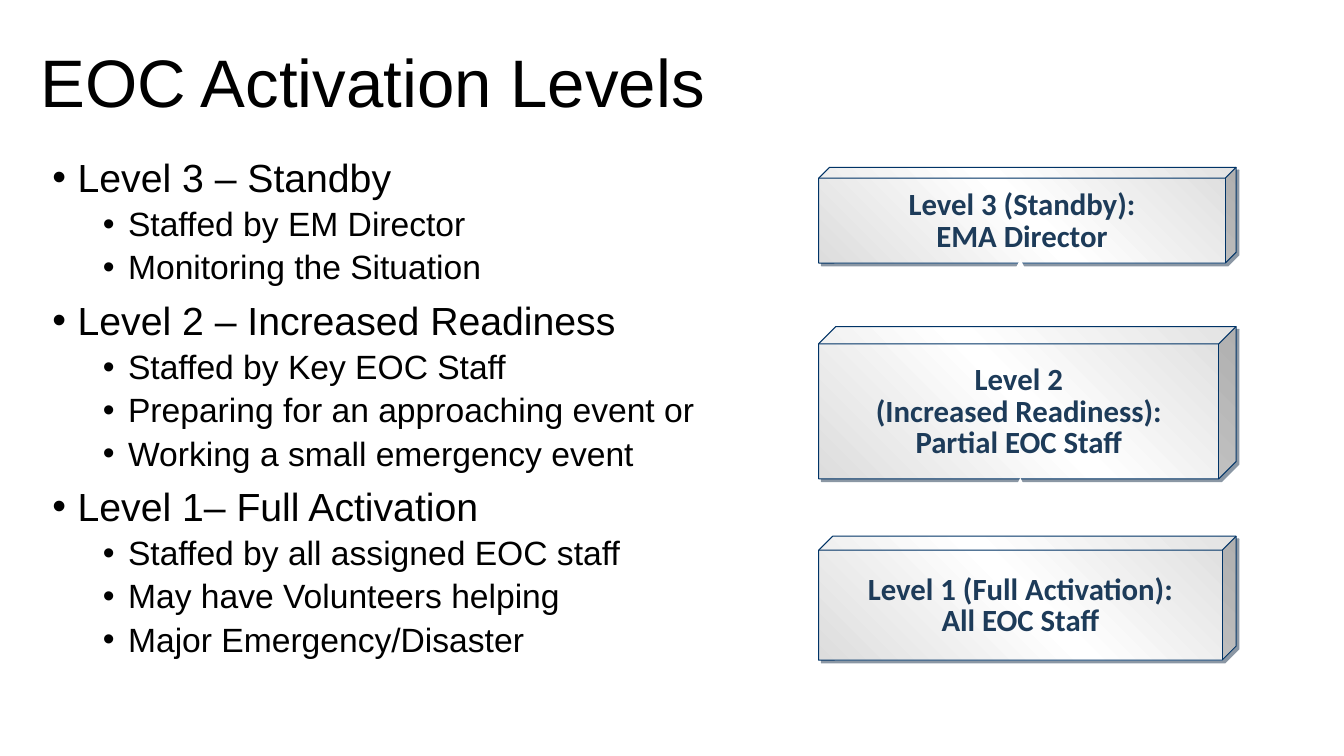
from dataclasses import dataclass

from lxml import etree
from pptx import Presentation
from pptx.dml.color import RGBColor
from pptx.enum.shapes import MSO_CONNECTOR, MSO_SHAPE
from pptx.enum.text import MSO_ANCHOR, MSO_AUTO_SIZE, PP_ALIGN
from pptx.oxml import parse_xml
from pptx.oxml.ns import nsdecls, qn
from pptx.util import Inches, Pt

CUBE = MSO_SHAPE.CUBE
STRAIGHT = MSO_CONNECTOR.STRAIGHT
LEFT, CENTER = PP_ALIGN.LEFT, PP_ALIGN.CENTER
TOP, MIDDLE = MSO_ANCHOR.TOP, MSO_ANCHOR.MIDDLE
NO_FIT = MSO_AUTO_SIZE.NONE


@dataclass(frozen=True)
class Theme:
    text: str = "000000"
    label: str = "1D3B59"
    edge: str = "003366"
    arrow: str = "FFFFFF"
    shade: str = "DDDDDD"
    shine: str = "FFFFFF"
    shadow: str = "18314A"
    body_font: str = "Arial"
    label_font: str = "Calibri"
    title_size: int = 48
    level_size: int = 28
    detail_size: int = 24
    label_size: int = 22


THEME = Theme()

LEVELS = [
    ("Level 3 – Standby", ["Staffed by EM Director", "Monitoring the Situation"]),
    ("Level 2 – Increased Readiness", [
        "Staffed by Key EOC Staff",
        "Preparing for an approaching event or",
        "Working a small emergency event",
    ]),
    ("Level 1– Full Activation", [
        "Staffed by all assigned EOC staff",
        "May have Volunteers helping",
        "Major Emergency/Disaster",
    ]),
]
BLOCKS = [
    (3.24, 1.51, ["Level 2", "(Increased Readiness):", "Partial EOC Staff"]),
    (1.66, 0.95, ["Level 3 (Standby):", "EMA Director"]),
    (5.32, 1.23, ["Level 1 (Full Activation):", "All EOC Staff"]),
]
ARROWS = [(3.23, 2.57), (5.41, 4.74)]


def add_text(paragraph, words, font_name, size, color, bold=False):
    run = paragraph.add_run()
    run.text = words
    run.font.name = font_name
    run.font.size = Pt(size)
    run.font.bold = bold
    run.font.color.rgb = RGBColor.from_string(color)


def place(placeholder, left, top, width, height, anchor):
    placeholder.left, placeholder.top = Inches(left), Inches(top)
    placeholder.width, placeholder.height = Inches(width), Inches(height)
    frame = placeholder.text_frame
    frame.word_wrap = True
    frame.auto_size = NO_FIT
    frame.vertical_anchor = anchor
    return frame


prs = Presentation()
prs.slide_width, prs.slide_height = Inches(13.33), Inches(7.5)
slide = prs.slides.add_slide(prs.slide_layouts[1])

heading = place(slide.shapes.title, 0.3, 0.32, 12.81, 1.06, MIDDLE).paragraphs[0]
heading.alignment = LEFT
heading.line_spacing = 0.9
add_text(heading, "EOC Activation Levels", THEME.body_font, THEME.title_size, THEME.text)

outline = place(slide.placeholders[1], 0.42, 1.52, 7.18, 5.65, TOP)
entries = []
for level, details in LEVELS:
    entries.append((0, level, THEME.level_size, 10, 0.25))
    entries += [(1, detail, THEME.detail_size, 5, 0.75) for detail in details]

for index, (depth, words, size, gap, indent) in enumerate(entries):
    entry = outline.add_paragraph() if index else outline.paragraphs[0]
    entry.level = depth
    entry.line_spacing = 0.9
    entry.space_before = Pt(gap if index else 0)
    entry.space_after = Pt(0)
    properties = entry._p.get_or_add_pPr()
    properties.set("marL", str(Inches(indent)))
    properties.set("indent", str(Inches(-0.25)))
    etree.SubElement(properties, qn("a:buFont")).set("typeface", "Arial")
    etree.SubElement(properties, qn("a:buChar")).set("char", "•")
    add_text(entry, words, THEME.body_font, size, THEME.text)

for position, (top, height, label_lines) in enumerate(BLOCKS):
    if position == 2:
        for start, end in ARROWS:
            arrow = slide.shapes.add_connector(
                STRAIGHT, Inches(10.12), Inches(start), Inches(10.12), Inches(end))
            arrow.line.color.rgb = RGBColor.from_string(THEME.arrow)
            arrow.line.width = Pt(6)
            etree.SubElement(arrow.line._get_or_add_ln(), qn("a:tailEnd")).set("type", "triangle")
            etree.SubElement(arrow._element.spPr, qn("a:effectLst"))

    block = slide.shapes.add_shape(CUBE, Inches(8.12), Inches(top), Inches(4.14), Inches(height))
    block.adjustments[0] = 0.113
    block.line.color.rgb = RGBColor.from_string(THEME.edge)
    block.line.width = Pt(0.75)
    block.shadow.inherit = False
    look = block._element.spPr
    look.find(qn("a:ln")).addprevious(parse_xml(
        f'<a:gradFill {nsdecls("a")} rotWithShape="1"><a:gsLst>'
        f'<a:gs pos="0"><a:srgbClr val="{THEME.shade}"/></a:gs>'
        f'<a:gs pos="50000"><a:srgbClr val="{THEME.shine}"/></a:gs>'
        f'<a:gs pos="100000"><a:srgbClr val="{THEME.shade}"/></a:gs>'
        '</a:gsLst><a:lin ang="18900000" scaled="1"/></a:gradFill>'))
    look.find(qn("a:effectLst")).append(parse_xml(
        f'<a:outerShdw {nsdecls("a")} dist="{Pt(2.8)}" dir="2700000" algn="ctr" rotWithShape="0">'
        f'<a:srgbClr val="{THEME.shadow}"><a:alpha val="50000"/></a:srgbClr></a:outerShdw>'))

    label = block.text_frame
    label.word_wrap = False
    label.vertical_anchor = MIDDLE
    label.margin_left = label.margin_right = Inches(0.1)
    label.margin_top, label.margin_bottom = Inches(0.05), Inches(0.02)
    for index, words in enumerate(label_lines):
        line = label.add_paragraph() if index else label.paragraphs[0]
        line.alignment = CENTER
        line.line_spacing = 0.85
        add_text(line, words, THEME.label_font, THEME.label_size, THEME.label, bold=True)

prs.save("out.pptx")
